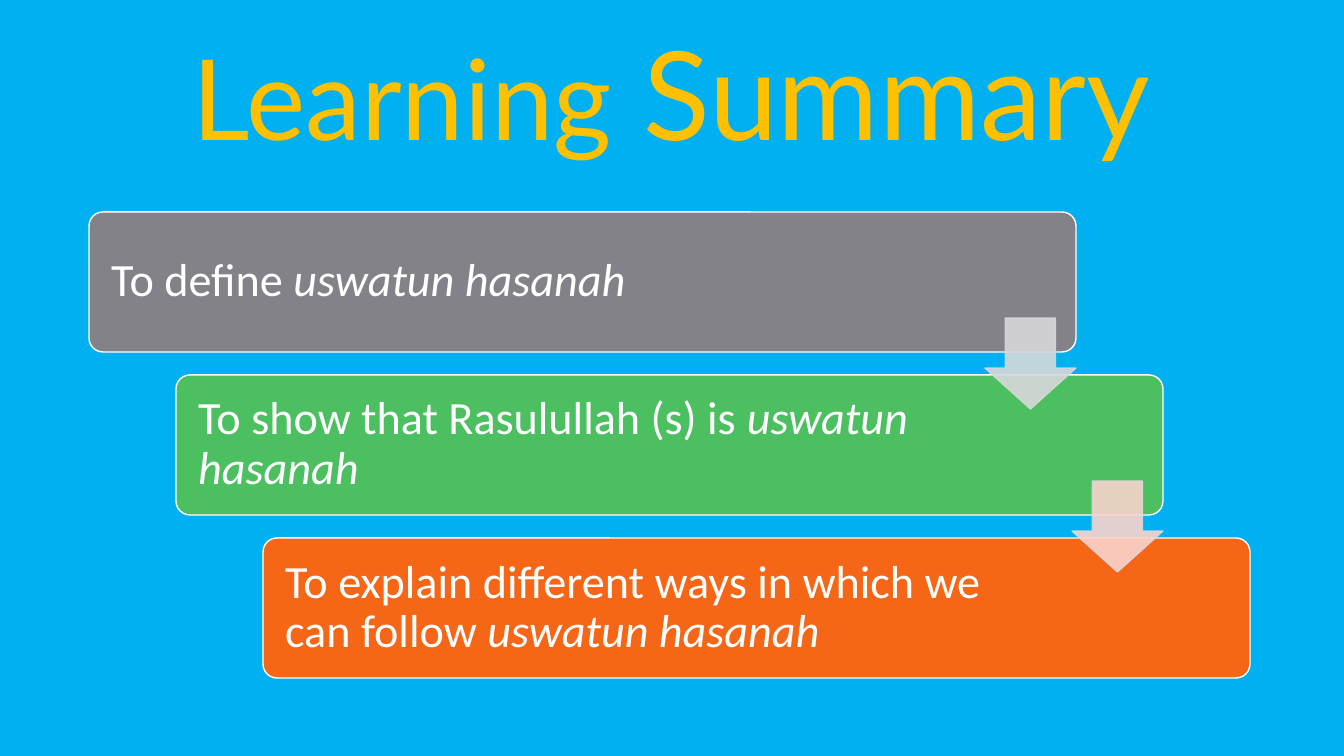
"""Build the Learning Summary slide: three stepped cards joined by arrows."""
from lxml import etree
from pptx import Presentation
from pptx.dml.color import RGBColor
from pptx.enum.shapes import MSO_SHAPE as SHAPE
from pptx.enum.text import MSO_ANCHOR as ANCHOR, MSO_AUTO_SIZE as AUTO_SIZE, PP_ALIGN as ALIGN
from pptx.oxml.ns import qn
from pptx.util import Pt

PX = 914400 / 100.8
SKY = RGBColor(0x00, 0xB0, 0xF0)
GOLD = RGBColor(0xFF, 0xC0, 0x00)
WHITE = RGBColor(0xFF, 0xFF, 0xFF)
GREY = RGBColor(0x82, 0x82, 0x88)
GREEN = RGBColor(0x4C, 0xBF, 0x61)
ORANGE = RGBColor(0xF5, 0x66, 0x17)
PALE_GREY = RGBColor(0xD8, 0xD8, 0xDA)
PALE_PINK = RGBColor(0xFB, 0xD3, 0xCC)

CARD_LEFT, CARD_TOP, CARD_WIDTH, CARD_HEIGHT = 89, 212, 987, 140
STEP_X, STEP_Y = 87, 163
ARROW_SIZE, ARROW_DROP = 91, 106
CARDS = [
    ("To define ", GREY, 161),
    ("To show that Rasulullah (s) is ", GREEN, 197),
    ("To explain different ways in which we can follow ", ORANGE, 197),
]


def px(*lengths):
    return [round(length * PX) for length in lengths]


def add_block(kind, place, fill, line, adjustments):
    block = page.shapes.add_shape(kind, *px(*place))
    block.shadow.inherit = False
    block.fill.solid()
    block.fill.fore_color.rgb = fill
    block.line.color.rgb = line
    block.line.width = Pt(1)
    for index, value in enumerate(adjustments):
        block.adjustments[index] = value
    return block


deck = Presentation()
deck.slide_width, deck.slide_height = px(1344, 756)
page = deck.slides.add_slide(deck.slide_layouts[5])
page.background.fill.solid()
page.background.fill.fore_color.rgb = SKY

title = page.shapes.title
title.left, title.top, title.width, title.height = px(32, 12, 1279, 159)
title.text_frame.word_wrap = True
title.text_frame.auto_size = AUTO_SIZE.SHAPE_TO_FIT_TEXT
title.text_frame.vertical_anchor = ANCHOR.TOP
para = title.text_frame.paragraphs[0]
para.alignment = ALIGN.CENTER
para.font.name = "Lato"
para.font.color.rgb = GOLD
for words, size in (("Learning", 80), (" Summary", 88)):
    span = para.add_run()
    span.text = words
    span.font.size = Pt(size)

for row, (words, colour, right_inset) in enumerate(CARDS):
    place = (CARD_LEFT + row * STEP_X, CARD_TOP + row * STEP_Y, CARD_WIDTH, CARD_HEIGHT)
    card = add_block(SHAPE.ROUNDED_RECTANGLE, place, colour, WHITE, [0.1])
    frame = card.text_frame
    frame.word_wrap = True
    frame.vertical_anchor = ANCHOR.MIDDLE
    frame.margin_left, frame.margin_right = px(18, right_inset)
    para = frame.paragraphs[0]
    para.alignment = ALIGN.LEFT
    para.line_spacing = 0.9
    para.font.name = "Calibri"
    para.font.size = Pt(33)
    para.font.color.rgb = WHITE
    para.add_run().text = words
    span = para.add_run()
    span.text = "uswatun hasanah"
    span.font.italic = True

for row, colour in enumerate((PALE_GREY, PALE_PINK)):
    left = CARD_LEFT + row * STEP_X + CARD_WIDTH - ARROW_SIZE
    top = CARD_TOP + row * STEP_Y + ARROW_DROP
    place = (left, top, ARROW_SIZE, ARROW_SIZE)
    arrow = add_block(SHAPE.DOWN_ARROW, place, colour, PALE_GREY, [0.55, 0.45])
    for tint in arrow.element.spPr.iter(qn("a:srgbClr")):
        etree.SubElement(tint, qn("a:alpha"), val="90000")

deck.save("out.pptx")
